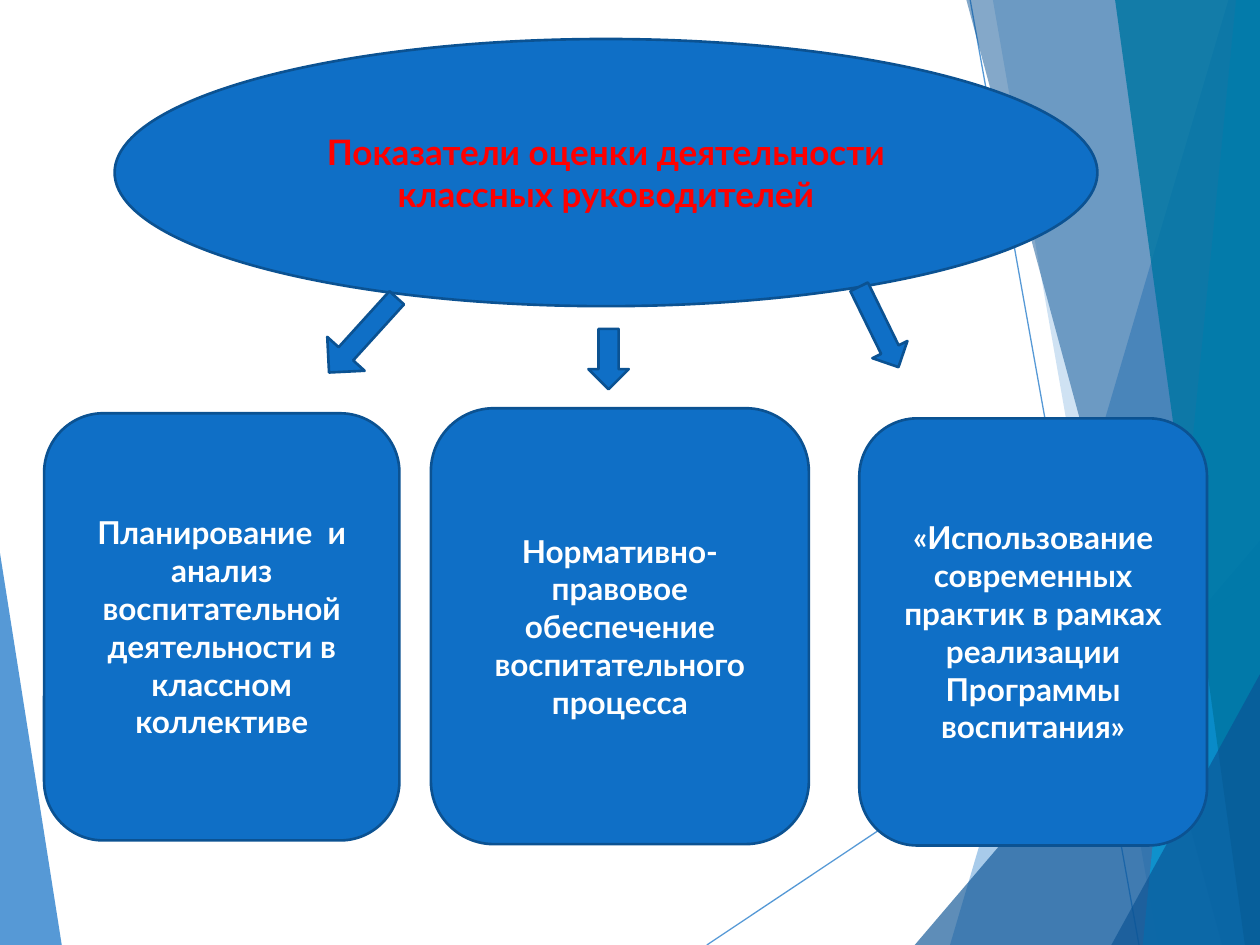
from lxml import etree
from pptx import Presentation
from pptx.dml.color import RGBColor
from pptx.enum.shapes import MSO_CONNECTOR, MSO_SHAPE
from pptx.enum.text import MSO_ANCHOR, PP_ALIGN
from pptx.oxml.ns import qn
from pptx.util import Pt

PX = 9144  # 100 px to the inch
W, H = 1000, 750
BLUE, NAVY, CYAN, TEAL = "0F6FC6", "0B5394", "009DD9", "0076A3"
OUTLINE, WHITE, RED = "0B5292", "FFFFFF", "FF0000"
STRAIGHT = MSO_CONNECTOR.STRAIGHT
OVAL, ROUNDED, ARROW = MSO_SHAPE.OVAL, MSO_SHAPE.ROUNDED_RECTANGLE, MSO_SHAPE.DOWN_ARROW
MIDDLE, CENTER = MSO_ANCHOR.MIDDLE, PP_ALIGN.CENTER


def paint(fill, color, opacity=100):
    fill.solid()
    fill.fore_color.rgb = RGBColor.from_string(color)
    if opacity < 100:
        clr = fill._xPr.find(qn("a:solidFill"))[0]
        etree.SubElement(clr, qn("a:alpha"), val=str(opacity * 1000))


def add_block(kind, box, text="", size=18, color=WHITE):
    sp = s.shapes.add_shape(kind, *[v * PX for v in box])
    sp.shadow.inherit = False
    paint(sp.fill, BLUE)
    paint(sp.line.fill, OUTLINE)
    sp.line.width = Pt(1.5)
    if text:
        tf = sp.text_frame
        tf.word_wrap = True
        tf.vertical_anchor = MIDDLE
        p = tf.paragraphs[0]
        p.alignment = CENTER
        r = p.add_run()
        r.text = text
        for name, value in {"name": "Lato", "size": Pt(size), "bold": True}.items():
            setattr(r.font, name, value)
        paint(r.font.fill, color)
    return sp


prs = Presentation()
prs.slide_width, prs.slide_height = W * PX, H * PX
s = prs.slides.add_slide(prs.slide_layouts[6])

# Thin background lines
for ends in [(561, H, W, 457), (770, 0, 904, H)]:
    line = s.shapes.add_connector(STRAIGHT, *[v * PX for v in ends])
    paint(line.line.fill, BLUE, 70)
    line.line.width = Pt(0.75)
    etree.SubElement(line._element.spPr, qn("a:effectLst"))

# Translucent background facets: color, opacity, corners
facets = [
    (BLUE, 70, [(0, 439), (49, H), (0, H)]),
    (BLUE, 36, [(975, 0), (754, H), (W, H), (W, 0)]),
    (BLUE, 20, [(788, 0), (919, H), (W, H), (W, 0)]),
    (NAVY, 66, [(726, H), (W, 429), (W, H)]),
    (NAVY, 50, [(767, 0), (970, H), (W, H), (W, 0)]),
    (CYAN, 70, [(981, 0), (907, H), (W, H), (W, 0)]),
    (TEAL, 82, [(885, 0), (988, H), (W, H), (W, 0)]),
    (NAVY, 66, [(882, H), (W, 535), (W, H)]),
]
for color, opacity, corners in facets:
    builder = s.shapes.build_freeform(*corners[0], scale=PX)
    builder.add_line_segments(corners[1:], close=True)
    sp = builder.convert_to_shape()
    sp.shadow.inherit = False
    paint(sp.fill, color, opacity)
    sp.line.fill.background()

# Heading and the three indicators
add_block(OVAL, (91, 31, 780, 212),
          "Показатели оценки деятельности классных руководителей", 20, RED)
indicators = [
    ((35, 328, 282, 339),
     "Планирование  и анализ воспитательной деятельности в классном коллективе"),
    ((682, 332, 276, 339),
     "«Использование современных практик в рамках реализации Программы воспитания»"),
    ((342, 324, 300, 346),
     "Нормативно-правовое обеспечение воспитательного процесса"),
]
for box, text in indicators:
    add_block(ROUNDED, box, text)

# Arrows from the heading: box, rotation, shaft share of the width
arrows = [
    ((467, 261, 32, 48), 0, 0.5),
    ((682, 224, 31, 71), 333.9, 0.5),
    ((268, 226, 40, 80), 42.2, 0.39),
]
for box, rotation, shaft in arrows:
    sp = add_block(ARROW, box)
    sp.rotation = rotation
    sp.adjustments[0] = shaft

prs.save("out.pptx")
